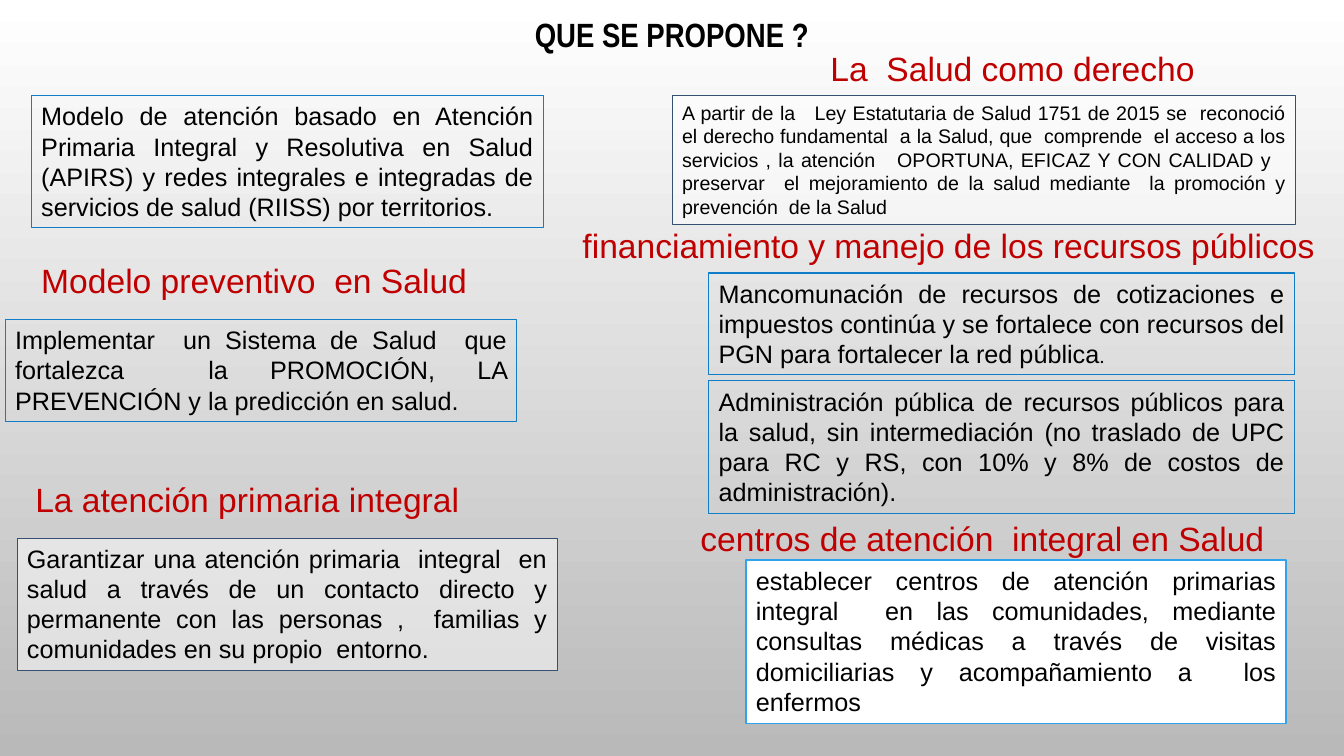
from lxml import etree
from pptx import Presentation
from pptx.dml.color import RGBColor
from pptx.enum.shapes import MSO_SHAPE
from pptx.enum.text import MSO_ANCHOR, MSO_AUTO_SIZE, PP_ALIGN
from pptx.oxml.ns import qn
from pptx.util import Cm, Pt

COLORS = {
    "black": "000000",
    "white": "FFFFFF",
    "gray": "B9B9B9",
    "red": "C00000",
    "navy": "355071",
    "blue": "107EC6",
    "sky": "2FA3EE",
}


def color(name):
    return RGBColor.from_string(COLORS[name])


def write(shape, text, size, font_color, align, font_name="Arial"):
    frame = shape.text_frame
    frame.word_wrap = True
    frame.auto_size = MSO_AUTO_SIZE.NONE
    frame.vertical_anchor = MSO_ANCHOR.TOP
    paragraph = frame.paragraphs[0]
    paragraph.alignment = align
    paragraph.add_run().text = text
    paragraph.font.name = font_name
    paragraph.font.size = Pt(size)
    paragraph.font.color.rgb = color(font_color)
    return paragraph


presentation = Presentation()
presentation.slide_width = Cm(33.87)
presentation.slide_height = Cm(19.05)
slide = presentation.slides.add_slide(presentation.slide_layouts[5])

# Background: white at the top to gray at the bottom
background = slide.background.fill
background.gradient()
background.gradient_angle = 270
for stop, name, position in zip(background.gradient_stops, ("white", "gray"), (0, 1)):
    stop.color.rgb = color(name)
    stop.position = position

# Title
title = slide.shapes.title
title.left, title.top, title.width, title.height = Cm(9.78), Cm(0.23), Cm(14.3), Cm(1.27)
write(title, "QUE SE PROPONE ?", 24, "black", PP_ALIGN.CENTER, "Arial Narrow").font.bold = True

# Red headings: left, top, width, text
headings = [
    (0.79, 6.43, 12.9, "Modelo preventivo  en Salud"),
    (0.64, 11.94, 13.23, "La atención primaria integral"),
    (20.68, 1.09, 11.2, "La  Salud como derecho"),
    (14.43, 5.54, 19.79, "financiamiento y manejo de los recursos públicos"),
    (17.4, 12.93, 14.76, "centros de atención  integral en Salud"),
]
for left, top, width, text in headings:
    heading = slide.shapes.add_textbox(Cm(left), Cm(top), Cm(width), Cm(1.27))
    write(heading, text, 24, "red", PP_ALIGN.LEFT)

# Proposal boxes: left, top, width, height, line, line width, white opacity %, size, text
boxes = [
    (0.79, 2.41, 12.9, 3.33, "blue", 0.75, 0, 18,
     "Modelo de atención basado en Atención Primaria Integral y Resolutiva en Salud "
     "(APIRS) y redes integrales e integradas de servicios de salud (RIISS) por territorios."),
    (0.13, 8.05, 12.9, 2.57, "blue", 0.75, 0, 18,
     "Implementar  un Sistema de Salud  que fortalezca  la PROMOCIÓN, LA PREVENCIÓN "
     "y la predicción en salud."),
    (0.43, 13.56, 13.61, 3.33, "navy", 0.75, 50, 18,
     "Garantizar una atención primaria  integral  en salud a través de un contacto directo y "
     "permanente con las personas ,  familias y comunidades en su propio  entorno."),
    (16.94, 2.41, 15.72, 3.25, "navy", 0.75, 50, 14,
     "A partir de la   Ley Estatutaria de Salud 1751 de 2015 se  reconoció el derecho "
     "fundamental  a la Salud, que  comprende  el acceso a los servicios , la atención   "
     "OPORTUNA, EFICAZ Y CON CALIDAD y   preservar  el mejoramiento de la salud mediante  "
     "la promoción y prevención  de la Salud"),
    (17.86, 9.6, 14.76, 3.33, "blue", 0.75, 0, 18,
     "Administración pública de recursos públicos para la salud, sin intermediación (no "
     "traslado de UPC para RC y RS, con 10% y 8% de costos de administración)."),
    (18.8, 14.12, 13.61, 4.11, "sky", 1.25, 100, 18,
     "establecer centros de atención primarias integral  en las comunidades, mediante "
     "consultas médicas a través de visitas domiciliarias y acompañamiento a  los enfermos"),
    (17.86, 6.88, 14.76, 2.57, "blue", 0.75, 0, 18,
     "Mancomunación de recursos de cotizaciones e impuestos continúa y se fortalece con "
     "recursos del PGN para fortalecer la red pública"),
]
for left, top, width, height, line, line_width, opacity, size, text in boxes:
    box = slide.shapes.add_shape(MSO_SHAPE.RECTANGLE, Cm(left), Cm(top), Cm(width), Cm(height))
    box.shadow.inherit = False
    box.line.color.rgb = color(line)
    box.line.width = Pt(line_width)
    if opacity:
        box.fill.solid()
        box.fill.fore_color.rgb = color("white")
        white = box.fill._xPr.find(qn("a:solidFill"))[0]
        etree.SubElement(white, qn("a:alpha"), val=str(opacity * 1000))
    else:
        box.fill.background()
    paragraph = write(box, text, size, "black", PP_ALIGN.JUSTIFY)

# The last box ends with a smaller full stop
full_stop = paragraph.add_run()
full_stop.text = "."
full_stop.font.name = "Calibri"
full_stop.font.size = Pt(14)

presentation.save("out.pptx")
